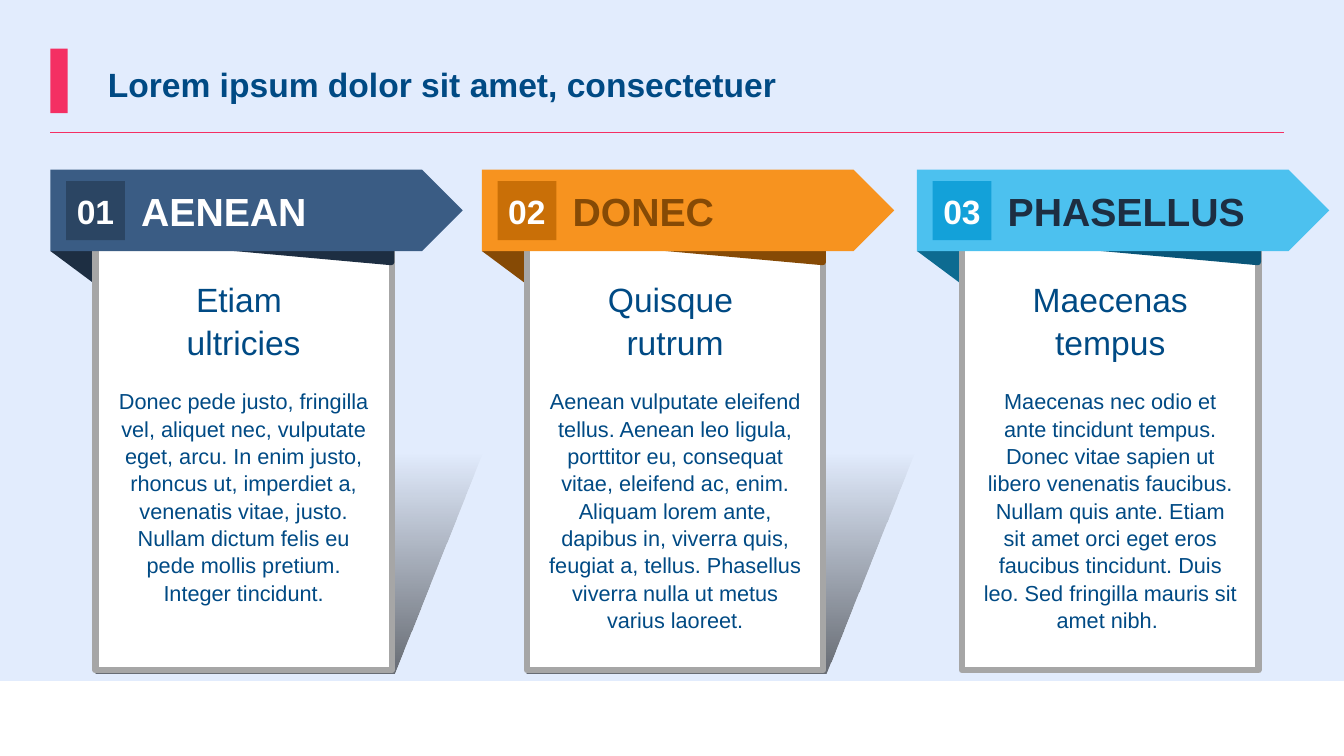
from dataclasses import dataclass

from pptx import Presentation
from pptx.dml.color import RGBColor
from pptx.enum.shapes import MSO_CONNECTOR, MSO_SHAPE
from pptx.enum.text import MSO_ANCHOR, MSO_AUTO_SIZE, PP_ALIGN
from pptx.oxml.ns import qn
from pptx.oxml.xmlchemy import OxmlElement
from pptx.util import Pt

RECT = MSO_SHAPE.RECTANGLE
TRIANGLE = MSO_SHAPE.RIGHT_TRIANGLE
ARROW = MSO_SHAPE.PENTAGON
PARALLELOGRAM = MSO_SHAPE.PARALLELOGRAM
TOP, MIDDLE = MSO_ANCHOR.TOP, MSO_ANCHOR.MIDDLE
LEFT, CENTER = PP_ALIGN.LEFT, PP_ALIGN.CENTER
NAVY, PINK, WHITE, GREY = "004A84", "F42F63", "FFFFFF", "A6A6A6"


@dataclass
class Card:
    left: float
    number: str
    label: str
    label_color: str
    arrow: str
    badge: str
    corner: str
    fold: str
    heading: list[str]
    body: str
    shadow: bool = True


CARDS = [
    Card(36, "01", "AENEAN", WHITE, "3A5C84", "2B4563", "1D2E42", "1D2E42",
         ["Etiam ", "ultricies"],
         "Donec pede justo, fringilla vel, aliquet nec, vulputate eget, arcu. In enim justo, "
         "rhoncus ut, imperdiet a, venenatis vitae, justo. Nullam dictum felis eu pede mollis "
         "pretium. Integer tincidunt."),
    Card(344.2, "02", "DONEC", "864A05", "F7931F", "C96F07", "864A05", "864A05",
         ["Quisque ", "rutrum"],
         "Aenean vulputate eleifend tellus. Aenean leo ligula, porttitor eu, consequat vitae, "
         "eleifend ac, enim. Aliquam lorem ante, dapibus in, viverra quis, feugiat a, tellus. "
         "Phasellus viverra nulla ut metus varius laoreet."),
    Card(655, "03", "PHASELLUS", "1D2E42", "4CC1EF", "13A1D9", "0D6B91", "095578",
         ["Maecenas tempus"],
         "Maecenas nec odio et ante tincidunt tempus. Donec vitae sapien ut libero venenatis "
         "faucibus. Nullam quis ante. Etiam sit amet orci eget eros faucibus tincidunt. Duis "
         "leo. Sed fringilla mauris sit amet nibh. ", shadow=False),
]


def rgb(color: str) -> RGBColor:
    """Turn a hex string into a colour."""
    return RGBColor.from_string(color)


def add_shape(s, kind, x: float, y: float, w: float, h: float, fill: str, line: str = ""):
    """Add a flat filled shape, outlined if a line colour is given."""
    sp = s.shapes.add_shape(kind, Pt(x), Pt(y), Pt(w), Pt(h))
    sp.shadow.inherit = False
    sp.fill.solid()
    sp.fill.fore_color.rgb = rgb(fill)
    if line:
        sp.line.color.rgb = rgb(line)
        sp.line.width = Pt(4.5)
    else:
        sp.line.fill.background()
    return sp


def set_frame(sp, anchor, insets: tuple[float, float, float, float]):
    """Set wrapping, anchor and insets (left, top, right, bottom)."""
    tf = sp.text_frame
    tf.word_wrap = True
    tf.vertical_anchor = anchor
    tf.margin_left, tf.margin_top, tf.margin_right, tf.margin_bottom = map(Pt, insets)
    return tf


def add_run(p, text: str, size: float, color: str, bold: bool, align) -> None:
    """Add one formatted run to an aligned paragraph."""
    p.alignment = align
    r = p.add_run()
    r.text = text
    r.font.name = "Arial"
    r.font.size = Pt(size)
    r.font.bold = bold
    r.font.color.rgb = rgb(color)


def add_shadow(s, x: float) -> None:
    """Add the slanted shadow that fades out towards its top."""
    sp = add_shape(s, PARALLELOGRAM, x, 323.3, 276.5, 157.7, "000000")
    sp.adjustments[0] = 0.4
    sp.fill.gradient()
    sp.fill.gradient_angle = 270
    for stop, position, opacity in zip(sp.fill.gradient_stops, (0, 1), (0, 55)):
        stop.position = position
        stop.color.rgb = rgb("000000")
    for color, opacity in zip(sp._element.spPr.iter(qn("a:srgbClr")), (0, 55)):
        alpha = OxmlElement("a:alpha")
        alpha.set("val", str(opacity * 1000))
        color.append(alpha)


def add_card(s, card: Card) -> None:
    """Draw one panel with its ribbon, folds and texts."""
    panel_left = card.left + 32.2
    if card.shadow:
        add_shadow(s, panel_left)
    add_shape(s, TRIANGLE, card.left, 179.3, 32, 23.8, card.corner).rotation = 180

    panel = add_shape(s, RECT, panel_left, 162, 211.7, 316.8, WHITE, GREY)
    tf = set_frame(panel, TOP, (14.4, 36, 14.4, 7.2))
    for i, text in enumerate(card.heading + [card.body]):
        p = tf.add_paragraph() if i else tf.paragraphs[0]
        is_body = i == len(card.heading)
        p.line_spacing = 1.05
        if is_body:
            p.space_before = Pt(18)
        add_run(p, text, 15.5 if is_body else 24, NAVY, False, CENTER)

    fold = add_shape(s, TRIANGLE, card.left + 100, 174.2, 143.5, 13, card.fold, card.fold)
    fold.rotation = 180

    arrow = add_shape(s, ARROW, card.left, 121.2, 294.5, 58.1, card.arrow)
    tf = set_frame(arrow, MIDDLE, (64.8, 3.6, 7.2, 3.6))
    add_run(tf.paragraphs[0], card.label, 28, card.label_color, True, LEFT)

    badge = add_shape(s, RECT, card.left + 11.2, 129.4, 42, 42.2, card.badge)
    tf = set_frame(badge, MIDDLE, (0, 3.6, 0, 3.6))
    add_run(tf.paragraphs[0], card.number, 24, WHITE, True, CENTER)


def add_header(s) -> None:
    """Fill in the title and draw its bar and rule."""
    title = s.shapes.title
    title.left, title.top, title.width, title.height = Pt(69.8), Pt(41.8), Pt(682.6), Pt(36)
    tf = set_frame(title, MIDDLE, (7.2, 3.6, 7.2, 3.6))
    tf.auto_size = MSO_AUTO_SIZE.SHAPE_TO_FIT_TEXT
    add_run(tf.paragraphs[0], "Lorem ipsum dolor sit amet, consectetuer", 24, NAVY, True, LEFT)
    add_shape(s, RECT, 36, 34.7, 12.4, 46.2, PINK)
    rule = s.shapes.add_connector(MSO_CONNECTOR.STRAIGHT, Pt(36), Pt(94.4), Pt(917), Pt(94.4))
    rule.line.color.rgb = rgb(PINK)
    rule.line.width = Pt(0.5)
    rule._element.spPr.append(OxmlElement("a:effectLst"))


def main() -> None:
    """Build the slide and save it."""
    prs = Presentation()
    prs.slide_width, prs.slide_height = Pt(960), Pt(540)
    s = prs.slides.add_slide(prs.slide_layouts[5])
    s.background.fill.solid()
    s.background.fill.fore_color.rgb = rgb("E2ECFD")
    add_shape(s, RECT, 0, 486.5, 960, 53.5, WHITE)
    add_header(s)
    for card in CARDS:
        add_card(s, card)
    prs.save("out.pptx")


if __name__ == "__main__":
    main()
